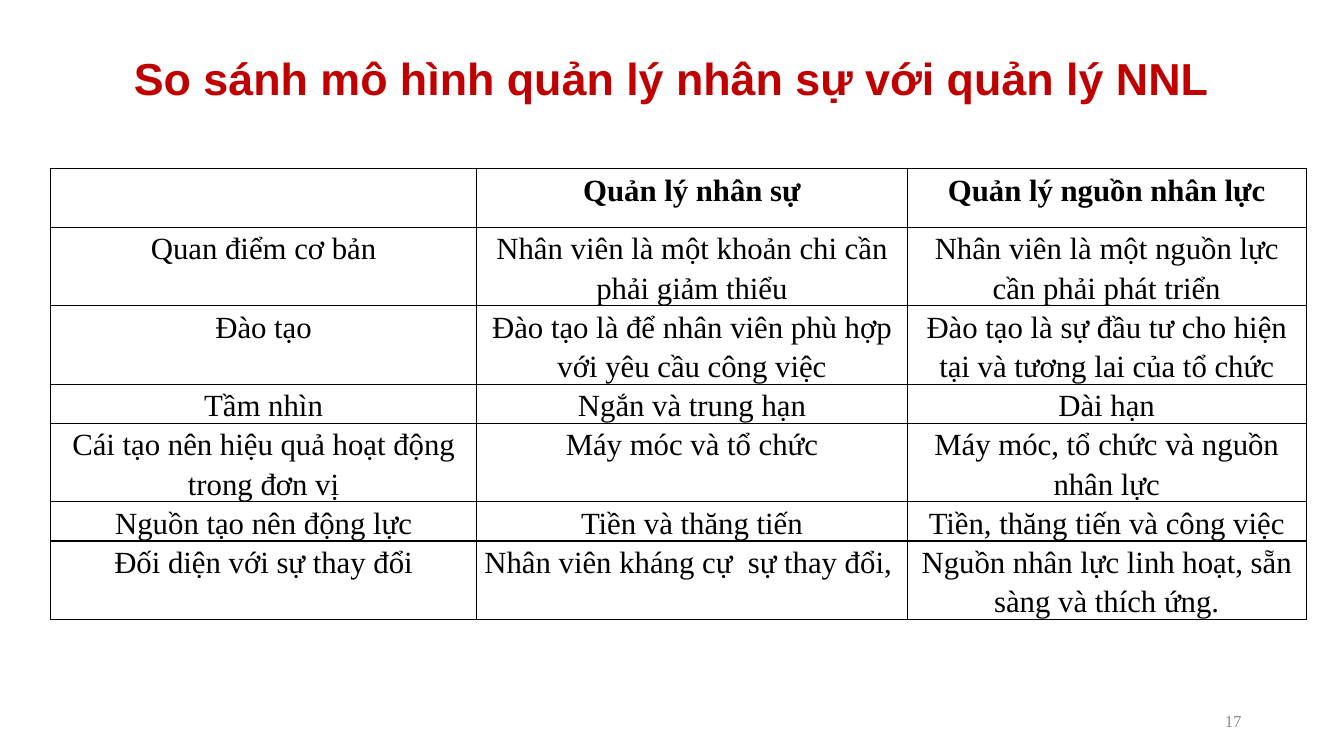
from dataclasses import dataclass

from pptx import Presentation
from pptx.dml.color import RGBColor
from pptx.enum.text import MSO_ANCHOR as Anchor, MSO_AUTO_SIZE as AutoSize, PP_ALIGN as Align
from pptx.oxml import parse_xml
from pptx.oxml.ns import nsdecls
from pptx.util import Pt


@dataclass(frozen=True)
class Theme:
    heading_font: str = "Arial"
    body_font: str = "Times New Roman"
    red: str = "C00000"
    black: str = "000000"
    grey: str = "8C8C8C"
    title_size: int = 32
    table_size: int = 22
    number_size: int = 12
    border_width: int = 1


THEME = Theme()

COLUMN_WIDTHS = (304.5, 307.5, 285)
ROW_HEIGHTS = (42, 56, 56, 28, 56, 28, 56)
COMPARISON = (
    ("", "Quản lý nhân sự", "Quản lý nguồn nhân lực"),
    ("Quan điểm cơ bản",
     "Nhân viên là một khoản chi cần phải giảm thiểu",
     "Nhân viên là một nguồn lực cần phải phát triển"),
    ("Đào tạo",
     "Đào tạo là để nhân viên phù hợp với yêu cầu công việc",
     "Đào tạo là sự đầu tư cho hiện tại và tương lai của tổ chức"),
    ("Tầm nhìn", "Ngắn và trung hạn", "Dài hạn"),
    ("Cái tạo nên hiệu quả hoạt động trong đơn vị",
     "Máy móc và tổ chức",
     "Máy móc, tổ chức và nguồn nhân lực"),
    ("Nguồn tạo nên động lực", "Tiền và thăng tiến", "Tiền, thăng tiến và công việc"),
    ("Đối diện với sự thay đổi",
     "Nhân viên kháng cự  sự thay đổi, ",
     "Nguồn nhân lực linh hoạt, sẵn sàng và thích ứng."),
)


def write_text(frame, text, *, font, size, color, bold=False, align=Align.CENTER, spacing=1.0):
    """Fill a text frame with one formatted paragraph."""
    para = frame.paragraphs[0]
    para.alignment = align
    para.line_spacing = spacing
    para.font.size = Pt(size)
    if text:
        span = para.add_run()
        span.text = text
        span.font.name = font
        span.font.size = Pt(size)
        span.font.bold = bold
        span.font.color.rgb = RGBColor.from_string(color)


def place(shape, left, top, width, height):
    shape.left, shape.top = Pt(left), Pt(top)
    shape.width, shape.height = Pt(width), Pt(height)


def add_title(page, text):
    title = page.shapes.title
    place(title, 66, 29, 828, 58)
    frame = title.text_frame
    frame.auto_size = AutoSize.NONE
    frame.vertical_anchor = Anchor.MIDDLE
    write_text(frame, text, font=THEME.heading_font, size=THEME.title_size,
               color=THEME.red, bold=True, spacing=0.9)


def add_borders(cell):
    """Draw a thin line on all four sides of a cell."""
    properties = cell._tc.get_or_add_tcPr()
    for position, side in enumerate(("lnL", "lnR", "lnT", "lnB")):
        properties.insert(position, parse_xml(
            f'<a:{side} {nsdecls("a")} w="{Pt(THEME.border_width)}"><a:solidFill>'
            f'<a:srgbClr val="{THEME.black}"/></a:solidFill></a:{side}>'))


def add_comparison_table(page):
    table = page.shapes.add_table(
        len(COMPARISON), len(COLUMN_WIDTHS), Pt(36), Pt(120.5),
        Pt(sum(COLUMN_WIDTHS)), Pt(sum(ROW_HEIGHTS))).table
    table.first_row = table.horz_banding = False
    for column, width in zip(table.columns, COLUMN_WIDTHS):
        column.width = Pt(width)
    for row_index, (row, height, texts) in enumerate(zip(table.rows, ROW_HEIGHTS, COMPARISON)):
        row.height = Pt(height)
        for cell, text in zip(row.cells, texts):
            cell.fill.background()
            cell.margin_left = cell.margin_right = Pt(5)
            cell.margin_top = cell.margin_bottom = Pt(0)
            add_borders(cell)
            write_text(cell.text_frame, text, font=THEME.body_font, size=THEME.table_size,
                       color=THEME.black, bold=row_index == 0, spacing=1.15)


def add_page_number(page, number):
    box = page.shapes.add_textbox(Pt(678), Pt(500.5), Pt(216), Pt(29))
    frame = box.text_frame
    frame.word_wrap = True
    frame.vertical_anchor = Anchor.MIDDLE
    write_text(frame, number, font=THEME.body_font, size=THEME.number_size,
               color=THEME.grey, align=Align.RIGHT)


def main():
    deck = Presentation()
    deck.slide_width, deck.slide_height = Pt(960), Pt(540)
    title_only = deck.slide_layouts.get_by_name("Title Only")
    page = deck.slides.add_slide(title_only)

    # Heading, comparison and footer
    add_title(page, "So sánh mô hình quản lý nhân sự với quản lý NNL")
    add_comparison_table(page)
    add_page_number(page, "17")

    deck.save("out.pptx")


if __name__ == "__main__":
    main()
